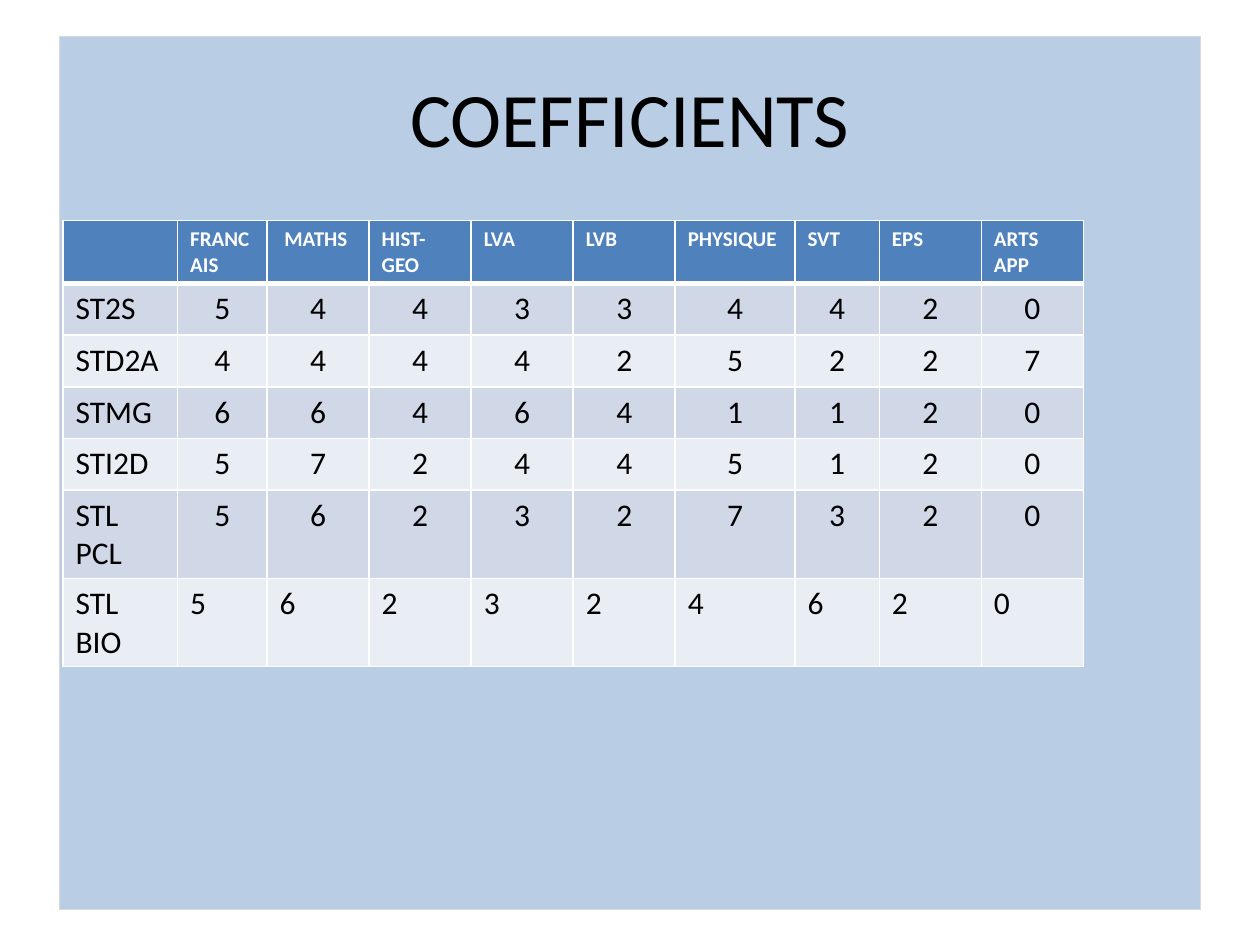
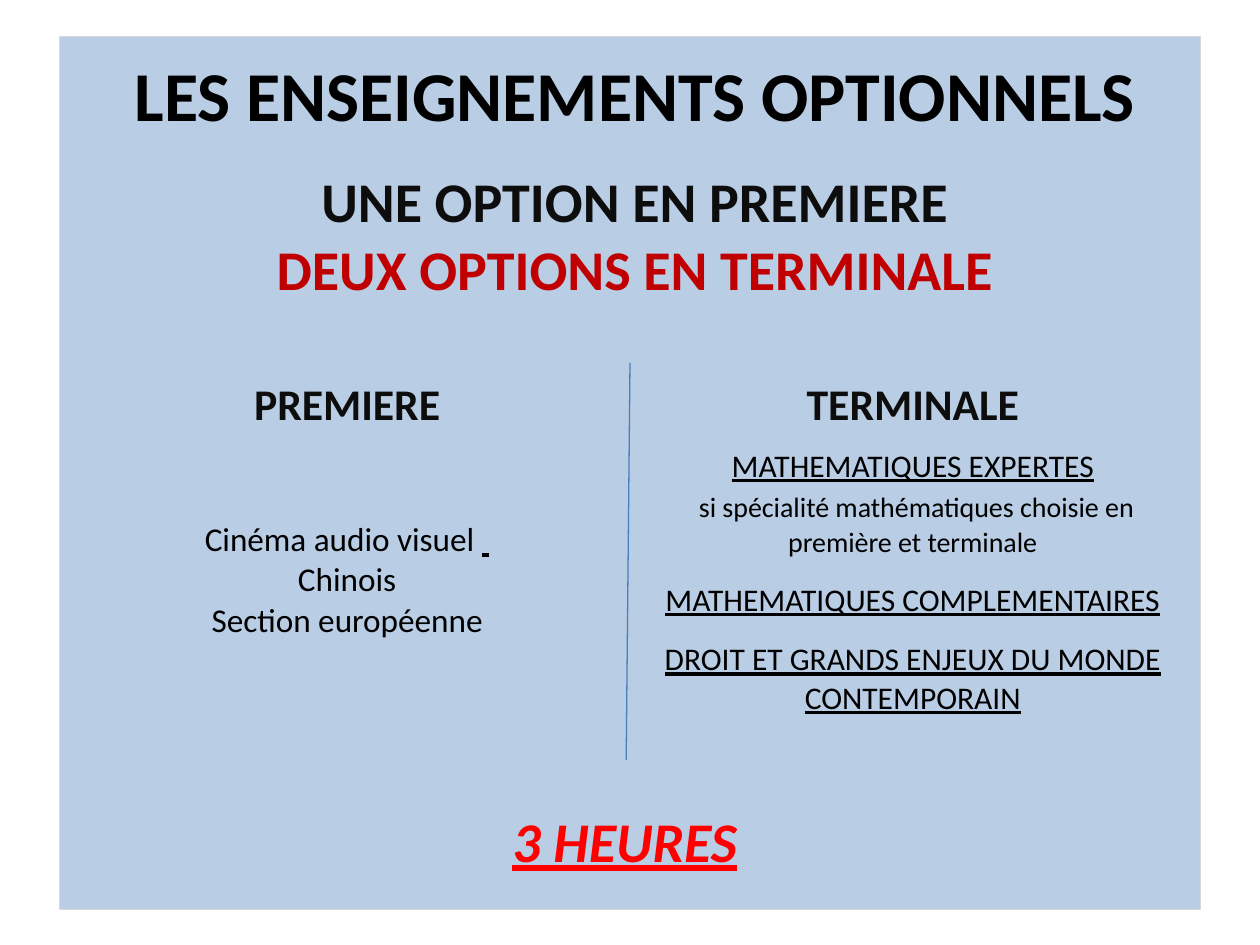
import pptx
import pptx.util
import pptx.dml.color
import pptx.enum.shapes
import pptx.enum.text
import pptx.oxml.ns
import lxml.etree

Inches, Pt = pptx.util.Inches, pptx.util.Pt
RGB = pptx.dml.color.RGBColor
CENTER = pptx.enum.text.PP_ALIGN.CENTER
LEFT = pptx.enum.text.PP_ALIGN.LEFT
MIDDLE = pptx.enum.text.MSO_ANCHOR.MIDDLE

FONT = "Calibri"
BLACK = RGB(0x00, 0x00, 0x00)
INK = RGB(0x0D, 0x0D, 0x0D)
WHITE = RGB(0xFF, 0xFF, 0xFF)
PANEL = RGB(0xB9, 0xCD, 0xE5)
EDGE = RGB(0xD9, 0xD9, 0xD9)
HEAD = RGB(0x4F, 0x81, 0xBD)
BANDS = RGB(0xD0, 0xD8, 0xE8), RGB(0xE9, 0xED, 0xF4)
RULE = RGB(0x4B, 0x7E, 0xBC)
MAROON = RGB(0xC0, 0x00, 0x00)
RED = RGB(0xFF, 0x00, 0x00)

SUBJECTS = ["", "FRANCAIS", " MATHS", "HIST-GEO", "LVA", "LVB",
            "PHYSIQUE", "SVT", "EPS", "ARTS APP"]
WEIGHTS = {"ST2S": "544334420", "STD2A": "444425227", "STMG": "664641120",
           "STI2D": "572445120", "STL PCL": "562327320", "STL BIO": "562324620"}
WIDTHS = [0.91, 0.71, 0.81, 0.81, 0.81, 0.81, 0.95, 0.67, 0.81, 0.81]
HEIGHTS = [0.5, 0.41, 0.41, 0.41, 0.41, 0.7, 0.7]


# Shared helpers
def style(run, size, color=BLACK, bold=False, italic=False, line=False):
    font = run.font
    font.name, font.size, font.bold = FONT, Pt(size), bold
    font.italic, font.underline = italic, line
    font.color.rgb = color


def write(par, text, size, align=CENTER, before=0, after=0, **look):
    par.text = text
    par.alignment = align
    par.space_before, par.space_after = Pt(before), Pt(after)
    for run in par.runs:
        style(run, size, **look)


def add_box(slide, left, top, width, height, wrap=True):
    box = slide.shapes.add_textbox(Inches(left), Inches(top), Inches(width), Inches(height))
    box.text_frame.word_wrap = wrap
    return box.text_frame


def add_grid(slide, left, top, widths, heights):
    table = slide.shapes.add_table(
        len(heights), len(widths), Inches(left), Inches(top),
        Inches(sum(widths)), Inches(sum(heights))).table
    table.first_row = table.horz_banding = False
    for col, width in zip(table.columns, widths):
        col.width = Inches(width)
    for row, height in zip(table.rows, heights):
        row.height = Inches(height)
    return table


def set_edges(cell, color=None, base=1, top=1):
    """Draw white cell borders, or none when no color is given."""
    props = cell._tc.get_or_add_tcPr()
    qn = pptx.oxml.ns.qn
    for side, width in zip("LRTB", (1, 1, top, base)):
        edge = lxml.etree.SubElement(props, qn("a:ln" + side), w=str(Pt(width)))
        if color is None:
            lxml.etree.SubElement(edge, qn("a:noFill"))
        else:
            fill = lxml.etree.SubElement(edge, qn("a:solidFill"))
            lxml.etree.SubElement(fill, qn("a:srgbClr"), val=str(color))


def add_page(deck):
    slide = deck.slides.add_slide(deck.slide_layouts[6])
    panel = slide.shapes.add_shape(
        pptx.enum.shapes.MSO_SHAPE.RECTANGLE,
        Inches(0.47), Inches(0.29), Inches(9.06), Inches(6.93))
    panel.shadow.inherit = False
    panel.fill.solid()
    panel.fill.fore_color.rgb = PANEL
    panel.line.color.rgb = EDGE
    panel.line.width = Pt(0.75)
    return slide


# Coefficient slide
def add_weights(slide, left, top):
    table = add_grid(slide, left, top, WIDTHS, HEIGHTS)
    rows = [SUBJECTS] + [[name, *marks] for name, marks in WEIGHTS.items()]
    for r, row in enumerate(rows):
        for c, text in enumerate(row):
            cell = table.cell(r, c)
            set_edges(cell, WHITE, base=1 if r else 3, top=3 if r == 1 else 1)
            cell.fill.solid()
            cell.fill.fore_color.rgb = BANDS[(r - 1) % 2] if r else HEAD
            par = cell.text_frame.paragraphs[0]
            if r == 0:
                write(par, text, 12, LEFT, color=WHITE, bold=True)
            else:
                inner = c > 0 and r < len(rows) - 1
                write(par, text, 18, CENTER if inner else LEFT)


def add_scores(deck):
    slide = add_page(deck)
    title = add_box(slide, 0.5, 0.3, 9, 1.25)
    title.vertical_anchor = MIDDLE
    write(title.paragraphs[0], "COEFFICIENTS", 44)
    add_weights(slide, 0.5, 1.75)


# Options slide
def add_titles(slide, left, top):
    frame = add_box(slide, left, top, 8.9, 2.1)
    write(frame.paragraphs[0], "LES ENSEIGNEMENTS OPTIONNELS", 40,
          before=6, after=12, bold=True)
    par = frame.add_paragraph()
    write(par, "UNE OPTION EN PREMIERE\vDEUX OPTIONS EN TERMINALE", 32,
          before=6, after=12, color=INK, bold=True)
    par.runs[1].font.color.rgb = MAROON


def add_rule(slide, x1, y1, x2, y2):
    rule = slide.shapes.add_connector(
        pptx.enum.shapes.MSO_CONNECTOR.STRAIGHT,
        Inches(x1), Inches(y1), Inches(x2), Inches(y2))
    rule.line.color.rgb = RULE
    rule.line.width = Pt(0.75)
    lxml.etree.SubElement(rule._element.spPr, pptx.oxml.ns.qn("a:effectLst"))


def add_choices(slide, left, top):
    table = add_grid(slide, left, top, [4.49, 4.49], [0.54, 2.19])
    for cell in table.iter_cells():
        set_edges(cell)
        cell.fill.background()
    for c, text in enumerate(["PREMIERE", "TERMINALE"]):
        write(table.cell(0, c).text_frame.paragraphs[0], text, 25, color=INK, bold=True)

    # First year
    cell = table.cell(1, 0)
    cell.vertical_anchor = MIDDLE
    frame = cell.text_frame
    frame.text = "Cinéma audio visuel \nChinois\nSection européenne"
    for par in frame.paragraphs:
        write(par, par.text, 19)
    tail = frame.paragraphs[0].add_run()
    tail.text = " "
    style(tail, 19, line=True)

    # Final year
    frame = table.cell(1, 1).text_frame
    write(frame.paragraphs[0], "MATHEMATIQUES EXPERTES", 18, line=True)
    note = frame.add_paragraph()
    write(note, " ", 19)
    run = note.add_run()
    run.text = "si spécialité mathématiques choisie en première et terminale"
    style(run, 16)
    for text in ("MATHEMATIQUES COMPLEMENTAIRES",
                 "DROIT ET GRANDS ENJEUX DU MONDE CONTEMPORAIN"):
        write(frame.add_paragraph(), text, 18, before=12, line=True)


def add_options(deck):
    slide = add_page(deck)
    add_rule(slide, 5, 2.88, 4.97, 6.03)
    add_titles(slide, 0.59, 0.36)
    add_choices(slide, 0.51, 2.96)
    hours = add_box(slide, 3.96, 6.35, 2, 0.64, wrap=False)
    write(hours.paragraphs[0], "3 HEURES", 32, color=RED, bold=True, italic=True, line=True)


def main():
    deck = pptx.Presentation()
    deck.slide_width, deck.slide_height = Inches(10), Inches(7.5)
    add_scores(deck)
    add_options(deck)
    deck.save("out.pptx")


if __name__ == "__main__":
    main()
